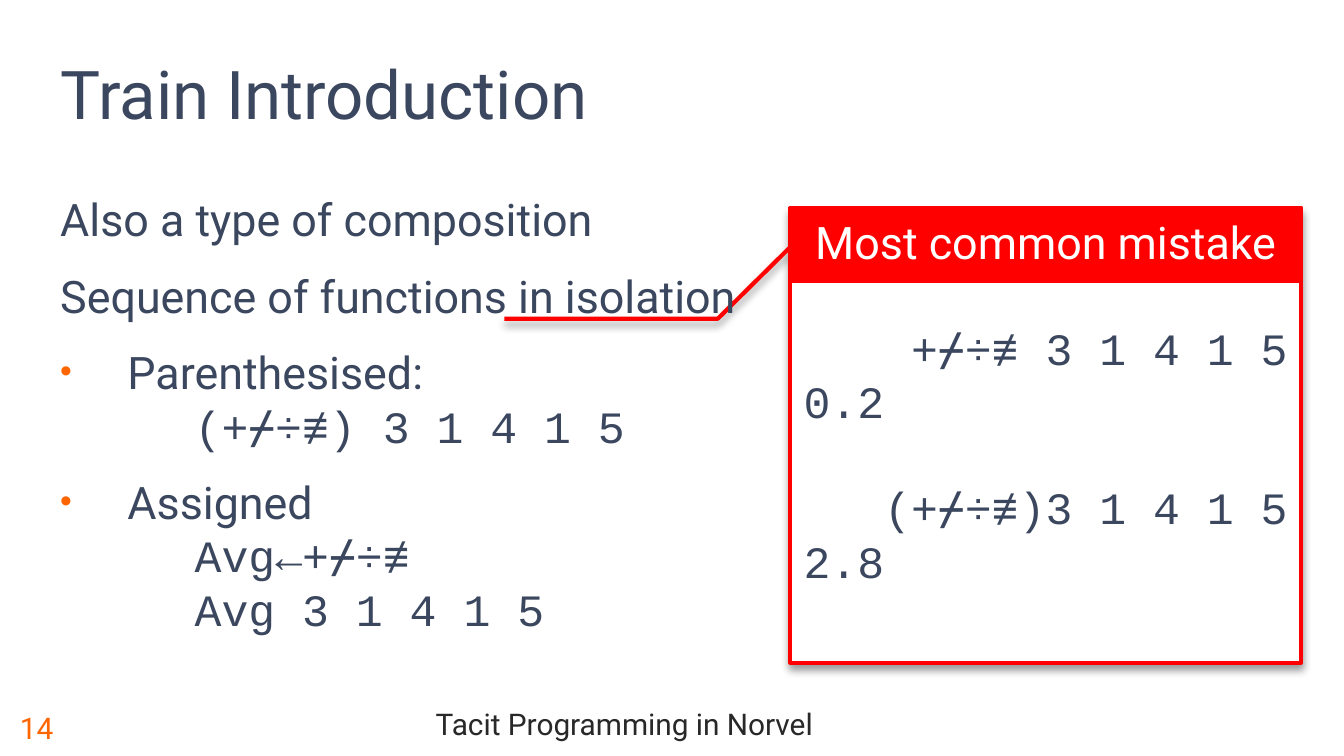
from dataclasses import dataclass

from lxml import etree
from pptx import Presentation
from pptx import util as u
from pptx.dml.color import RGBColor
from pptx.enum import shapes, text
from pptx.oxml import parse_xml
from pptx.oxml.ns import nsdecls, qn

Pt = u.Pt


@dataclass(frozen=True)
class Theme:
    ink: str = "3B475E"
    footer: str = "282828"
    accent: str = "FF6600"
    warning: str = "FF0000"
    paper: str = "FFFFFF"
    title_size: int = 36
    body_size: int = 24
    footer_size: int = 16
    sans: str = "Roboto"
    code: str = "Courier New"


THEME = Theme()
CALLOUT_LEFT, CALLOUT_TOP, CALLOUT_WIDTH = 423.4, 111.6, 273.6


def set_frame(shape, anchor=text.MSO_ANCHOR.TOP, top=3.6):
    frame = shape.text_frame
    frame.word_wrap = True
    frame.auto_size = text.MSO_AUTO_SIZE.NONE
    frame.vertical_anchor = anchor
    frame.margin_left = frame.margin_right = Pt(7.2)
    frame.margin_top, frame.margin_bottom = Pt(top), Pt(3.6)
    return frame


def write(paragraph, content, font=THEME.sans, size=THEME.body_size, color=THEME.ink,
          align=text.PP_ALIGN.LEFT, before=0, after=0, spacing=1.0):
    """Append formatted text; each newline becomes a line break."""
    paragraph.alignment = align
    paragraph.space_before, paragraph.space_after = Pt(before), Pt(after)
    paragraph.line_spacing = spacing
    for index, line in enumerate(content.split("\n")):
        if index:
            paragraph.add_line_break()
        if line:
            run = paragraph.add_run()
            run.text = line
            run.font.name, run.font.size = font, Pt(size)
            run.font.color.rgb = RGBColor.from_string(color)


def next_paragraph(frame):
    first = frame.paragraphs[0]
    return frame.add_paragraph() if first.runs else first


def add_bullet(paragraph):
    properties = paragraph._p.get_or_add_pPr()
    properties.set("marL", str(Pt(36)))
    properties.set("indent", str(-Pt(36)))
    color = etree.SubElement(properties, qn("a:buClr"))
    etree.SubElement(color, qn("a:srgbClr"), val=THEME.accent)
    etree.SubElement(properties, qn("a:buSzPct"), val="75000")
    etree.SubElement(properties, qn("a:buFont"), typeface="Arial")
    etree.SubElement(properties, qn("a:buChar"), char="•")


def add_shadow(shape):
    shape._element.spPr.append(parse_xml(
        f'<a:effectLst {nsdecls("a")}>'
        f'<a:outerShdw blurRad="{Pt(4)}" dist="{Pt(3)}" dir="5400000" rotWithShape="0">'
        '<a:srgbClr val="000000"><a:alpha val="40000"/></a:srgbClr>'
        '</a:outerShdw></a:effectLst>'))


def add_warning_shape(slide, kind, height, fill):
    shape = slide.shapes.add_shape(kind, Pt(CALLOUT_LEFT), Pt(CALLOUT_TOP),
                                   Pt(CALLOUT_WIDTH), Pt(height))
    shape.fill.solid()
    shape.fill.fore_color.rgb = RGBColor.from_string(fill)
    shape.line.color.rgb = RGBColor.from_string(THEME.warning)
    shape.line.width = Pt(2.25)
    return shape


def add_callout(slide):
    callout = add_warning_shape(slide, shapes.MSO_SHAPE.LINE_CALLOUT_2, 243.4, THEME.paper)
    for index, value in enumerate((0.082, 0.003, 0.243, -0.142, 0.243, -0.56)):
        callout.adjustments[index] = value
    add_shadow(callout)
    frame = set_frame(callout, top=60)
    examples = (("    +⌿÷≢ 3 1 4 1 5", "0.2"), ("   (+⌿÷≢)3 1 4 1 5", "2.8"))
    for index, (expression, result) in enumerate(examples):
        write(next_paragraph(frame), expression, font=THEME.code, before=28 * index)
        write(next_paragraph(frame), result, font=THEME.code)


def add_callout_header(slide):
    header = add_warning_shape(slide, shapes.MSO_SHAPE.RECTANGLE, 38.9, THEME.warning)
    header.shadow.inherit = False
    write(set_frame(header).paragraphs[0], "Most common mistake", color=THEME.paper,
          align=text.PP_ALIGN.CENTER)


def add_body(slide):
    body = slide.shapes.add_textbox(Pt(25.2), Pt(99.4), Pt(479.5), Pt(298.8))
    frame = set_frame(body)
    for statement in ("Also a type of composition", "Sequence of functions in isolation"):
        write(next_paragraph(frame), statement, after=12)
    for label, code in (("Parenthesised:", "\n\t(+⌿÷≢) 3 1 4 1 5"),
                        ("Assigned", "\n\tAvg←+⌿÷≢\n\tAvg 3 1 4 1 5")):
        paragraph = next_paragraph(frame)
        write(paragraph, label, after=12)
        write(paragraph, code, font=THEME.code, after=12)
        add_bullet(paragraph)


def add_title(slide):
    title = slide.shapes.title
    title.left, title.top, title.width, title.height = Pt(25.2), Pt(20.9), Pt(512.6), Pt(54)
    frame = set_frame(title, anchor=text.MSO_ANCHOR.BOTTOM)
    write(frame.paragraphs[0], "Train Introduction", size=THEME.title_size)


def add_footer_text(slide, content, left, width, **style):
    box = slide.shapes.add_textbox(Pt(left), Pt(373.7), Pt(width), Pt(31.7))
    frame = set_frame(box, anchor=text.MSO_ANCHOR.MIDDLE)
    write(frame.paragraphs[0], content, size=THEME.footer_size, **style)


def main():
    presentation = Presentation()
    presentation.slide_width, presentation.slide_height = Pt(720), Pt(405)
    slide = presentation.slides.add_slide(presentation.slide_layouts[5])
    add_title(slide)
    add_footer_text(slide, "Tacit Programming in Norvel", 56.2, 556.6, color=THEME.footer,
                    align=text.PP_ALIGN.CENTER, spacing=0.8)
    add_footer_text(slide, "14", 3.6, 52.6, color=THEME.accent)
    add_callout(slide)
    add_body(slide)
    add_callout_header(slide)
    presentation.save("out.pptx")


if __name__ == "__main__":
    main()
